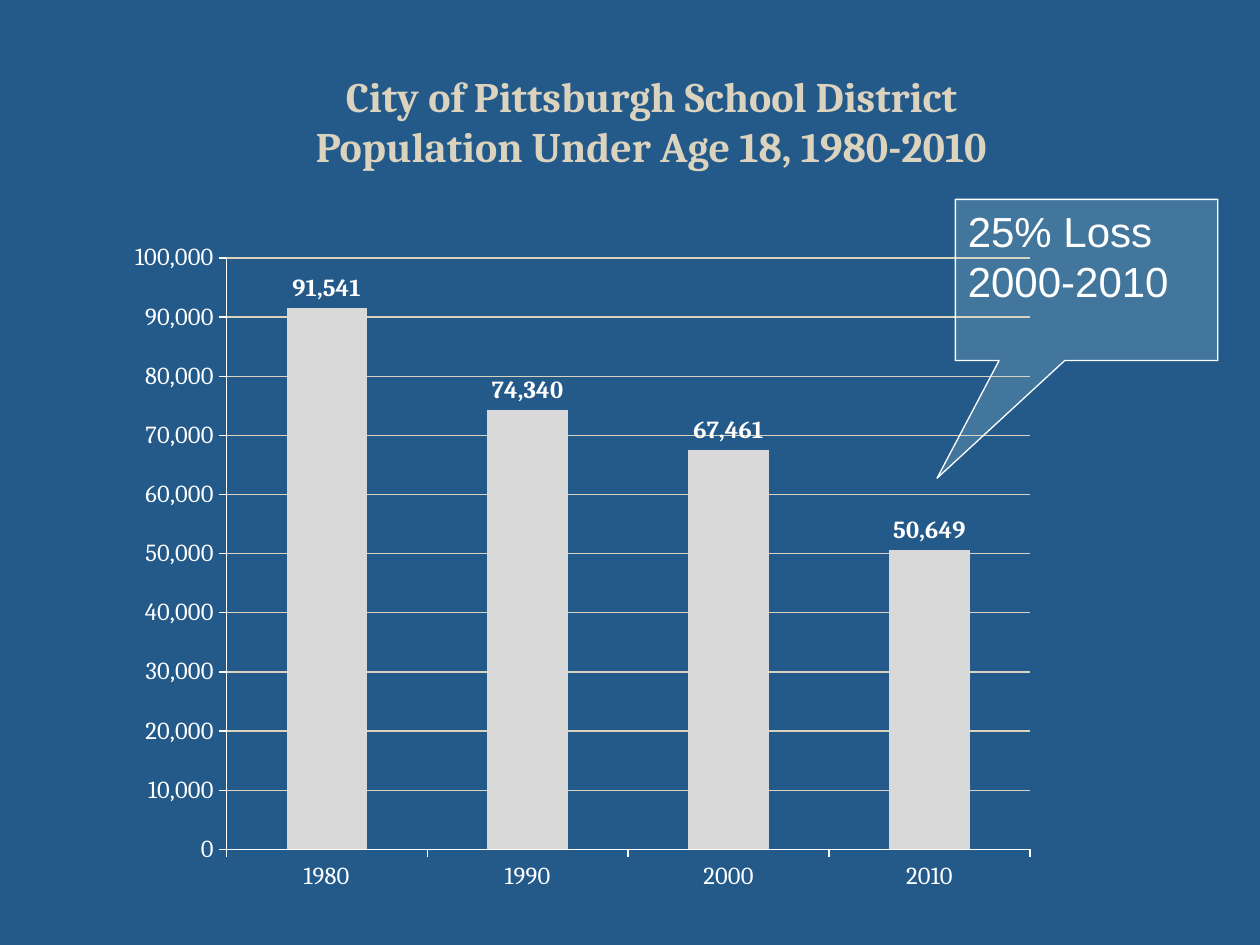
from lxml import etree
from pptx import Presentation
from pptx.chart.data import CategoryChartData as Data
from pptx.dml.color import RGBColor
from pptx.enum.chart import XL_CHART_TYPE as Kind, XL_LABEL_POSITION as Spot
from pptx.enum.chart import XL_TICK_MARK as Tick
from pptx.enum.shapes import MSO_SHAPE as Form
from pptx.enum.text import MSO_ANCHOR as Anchor, PP_ALIGN as Align
from pptx.oxml.ns import qn
from pptx.util import Cm, Pt


def tint(code):
    return RGBColor.from_string(code)


class Deck:
    serif, sans = "Cambria", "Arial"
    back, white, sand = "245A8A", "FFFFFF", "DCD3BE"
    gray, aqua = "D9D9D9", "BBE0E3"
    thin = Pt(0.75)

    def __init__(self, slide):
        self.slide = slide
        self.paint(slide.background.fill, self.back)

    def paint(self, fill, color):
        fill.solid()
        fill.fore_color.rgb = tint(color)

    def font(self, font, size, name, color, bold=False):
        font.size, font.name, font.bold = Pt(size), name, bold
        font.color.rgb = tint(color)

    def line(self, line, color):
        line.width = self.thin
        line.color.rgb = tint(color)

    def text(self, frame, rows, align, *style):
        frame.word_wrap = True
        for i, row in enumerate(rows):
            para = frame.add_paragraph() if i else frame.paragraphs[0]
            para.alignment = align
            run = para.add_run()
            run.text = row
            self.font(run.font, *style)

    def title(self, box, rows):
        frame = self.slide.shapes.add_textbox(*map(Cm, box)).text_frame
        frame.vertical_anchor = Anchor.MIDDLE
        # The top inset lowers the heading by half a line
        frame.margin_top = Cm(1.14)
        self.text(frame, rows, Align.CENTER, 24, self.serif, self.sand, True)

    def axis(self, axis):
        axis.major_tick_mark, axis.minor_tick_mark = Tick.OUTSIDE, Tick.NONE
        self.font(axis.tick_labels.font, 14, self.serif, self.white)
        self.line(axis.format.line, self.white)

    def place(self, chart, **area):
        plot = chart.element.chart.plotArea
        for old in plot.findall(qn("c:layout")):
            plot.remove(old)
        layout = etree.Element(qn("c:layout"))
        plot.insert(0, layout)
        manual = etree.SubElement(layout, qn("c:manualLayout"))
        parts = dict(layoutTarget="inner", xMode="edge", yMode="edge", **area)
        for tag, val in parts.items():
            etree.SubElement(manual, qn("c:" + tag)).set("val", str(val))

    def bars(self, box, cats, vals):
        data = Data(number_format="#,##0")
        data.categories = cats
        data.add_series("Series 1", vals)
        chart = self.slide.shapes.add_chart(
            Kind.COLUMN_CLUSTERED, *map(Cm, box), data).chart
        chart.has_legend = chart.has_title = False
        self.font(chart.font, 10, self.serif, self.white)
        self.place(chart, x=0.12, y=0.04, w=0.86, h=0.88)

        # Axes and grid
        years, count = chart.category_axis, chart.value_axis
        self.axis(years)
        self.axis(count)
        count.minimum_scale, count.maximum_scale = 0, 100000
        count.major_unit = 10000
        count.tick_labels.number_format = "#,##0"
        count.tick_labels.number_format_is_linked = False
        self.line(count.major_gridlines.format.line, self.sand)

        # Columns and labels
        plot = chart.plots[0]
        plot.gap_width, plot.vary_by_categories = 150, False
        self.paint(plot.series[0].format.fill, self.gray)
        tags = plot.series[0].data_labels
        tags.show_value, tags.position = True, Spot.OUTSIDE_END
        tags.number_format, tags.number_format_is_linked = "#,##0", False
        self.font(tags.font, 14, self.serif, self.white, True)

    def callout(self, box, tip, words):
        shape = self.slide.shapes.add_shape(
            Form.RECTANGULAR_CALLOUT, *map(Cm, box))
        shape.shadow.inherit = False
        shape.adjustments[0], shape.adjustments[1] = tip
        self.paint(shape.fill, self.aqua)
        hue = shape.element.spPr.find(qn("a:solidFill"))[0]
        etree.SubElement(hue, qn("a:alpha")).set("val", "21000")
        self.line(shape.line, self.white)
        frame = shape.text_frame
        frame.vertical_anchor = Anchor.TOP
        self.text(frame, [words], Align.LEFT, 24, self.sans, self.white)


def main():
    show = Presentation()
    show.slide_width, show.slide_height = Cm(25.4), Cm(19.05)
    deck = Deck(show.slides.add_slide(show.slide_layouts[6]))

    # Heading
    deck.title((1.7, 1.07, 22.86, 1.7),
               ["City of Pittsburgh School District",
                "Population Under Age 18, 1980-2010"])

    # Population by census year
    deck.bars((2.3, 4.66, 18.84, 13.55), ["1980", "1990", "2000", "2010"],
              [91541, 74340, 67461, 50649])

    # Remark on the last decade
    deck.callout((19.26, 4.02, 5.29, 3.25), (-0.57, 1.23),
                 "25% Loss 2000-2010")

    show.save("out.pptx")


if __name__ == "__main__":
    main()
